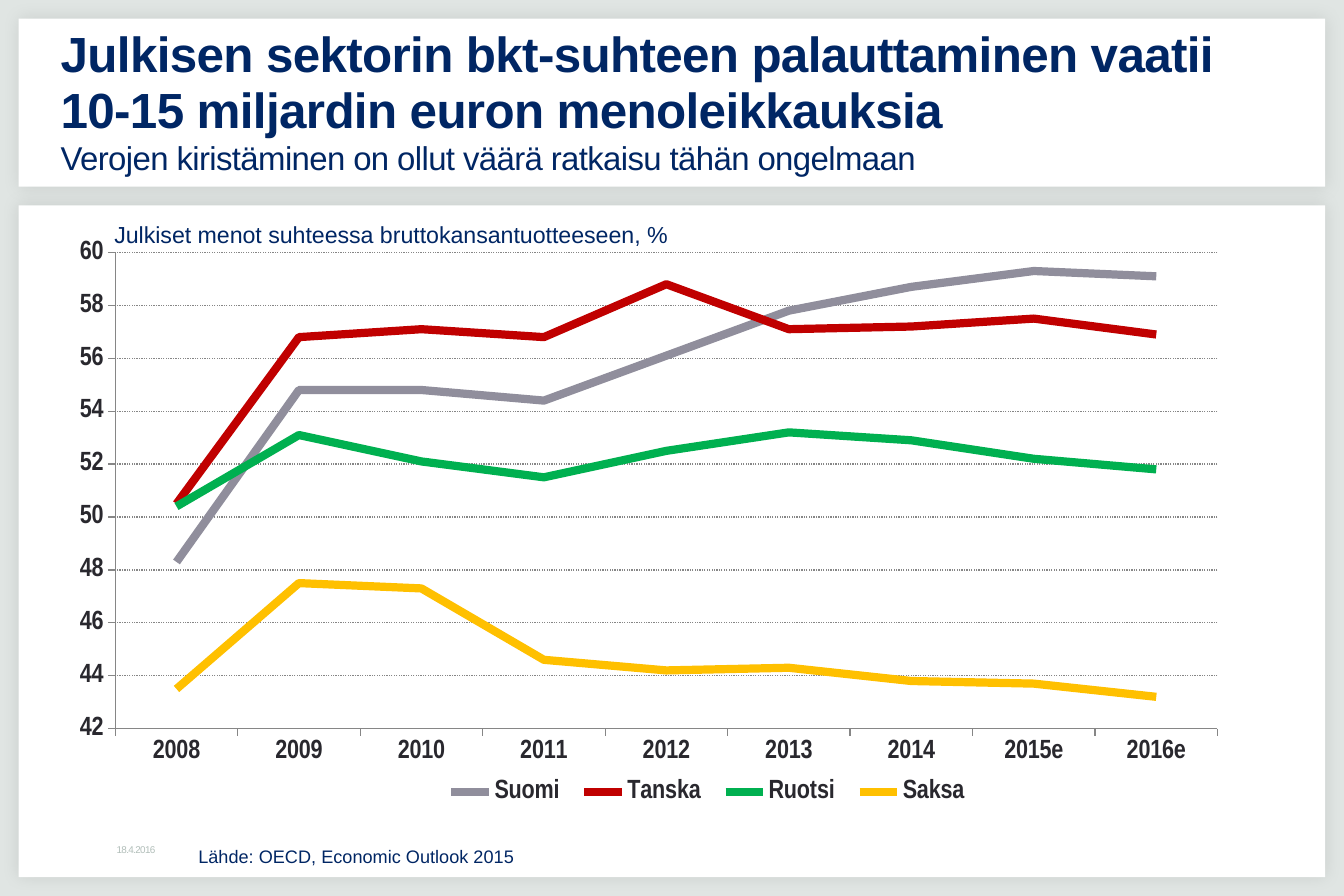
"""Build a slide comparing public spending to GDP in four countries."""
from dataclasses import dataclass

from pptx import Presentation
from pptx.chart.data import CategoryChartData
from pptx.dml.color import RGBColor
from pptx.enum.chart import XL_CHART_TYPE as ChartType, XL_LEGEND_POSITION as LegendPosition
from pptx.enum.chart import XL_TICK_MARK as TickMark
from pptx.enum.dml import MSO_LINE as Dash
from pptx.enum.shapes import MSO_SHAPE as ShapeType
from pptx.enum.text import MSO_ANCHOR as Anchor, MSO_AUTO_SIZE as AutoSize, PP_ALIGN as Align
from pptx.oxml import parse_xml
from pptx.oxml.ns import nsdecls
from pptx.util import Cm, Pt

TITLE = "Julkisen sektorin bkt-suhteen palauttaminen vaatii 10-15 miljardin euron menoleikkauksia"
SUBTITLE = "Verojen kiristäminen on ollut väärä ratkaisu tähän ongelmaan"
CAPTION = "Julkiset menot suhteessa bruttokansantuotteeseen, %"
SOURCE = "Lähde: OECD, Economic Outlook 2015"
DATE = "18.4.2016"

YEARS = ["2008", "2009", "2010", "2011", "2012", "2013", "2014", "2015e", "2016e"]
SPENDING = [
    ("Suomi", "908E9C", (48.3, 54.8, 54.8, 54.4, 56.1, 57.8, 58.7, 59.3, 59.1)),
    ("Tanska", "C00000", (50.5, 56.8, 57.1, 56.8, 58.8, 57.1, 57.2, 57.5, 56.9)),
    ("Ruotsi", "00B050", (50.4, 53.1, 52.1, 51.5, 52.5, 53.2, 52.9, 52.2, 51.8)),
    ("Saksa", "FFC000", (43.5, 47.5, 47.3, 44.6, 44.2, 44.3, 43.8, 43.7, 43.2)),
]
WIDTH, HEIGHT, MARGIN, HEADER = 28.8, 19.2, 0.4, 3.6
PLOT_AREA = (0.05, 0.02, 0.93, 0.83)
LEGEND_AREA = (0.32, 0.93, 0.46, 0.06)


@dataclass(frozen=True)
class Theme:
    font: str = "Arial"
    chart_font: str = "Arial Narrow"
    background: str = "E0E5E3"
    panel: str = "FFFFFF"
    navy: str = "002664"
    pale: str = "B1BEB9"
    ink: str = "29282E"
    rule: str = "868686"
    title_size: float = 30
    subtitle_size: float = 20
    caption_size: float = 14.1
    source_size: float = 11
    date_size: float = 6
    axis_size: float = 16


THEME = Theme()


def box(left, top, width, height):
    return Cm(left), Cm(top), Cm(width), Cm(height)


def paint(fill, color):
    fill.solid()
    fill.fore_color.rgb = RGBColor.from_string(color)


def set_font(font, name=THEME.font, size=THEME.source_size, color=THEME.navy, bold=False):
    font.name, font.size, font.bold = name, Pt(size), bold
    font.color.rgb = RGBColor.from_string(color)


def add_run(paragraph, text, spacing=None, **style):
    run = paragraph.add_run()
    run.text = text
    set_font(run.font, **style)
    if spacing:
        run.font._element.set("spc", str(round(spacing * 100)))


def add_text(slide, text, area, wrap=True, anchor=Anchor.TOP, inset=None, **style):
    frame = slide.shapes.add_textbox(*box(*area)).text_frame
    frame.word_wrap, frame.vertical_anchor = wrap, anchor
    if inset is not None:
        frame.margin_left = frame.margin_right = Cm(inset)
        frame.margin_top = frame.margin_bottom = Cm(inset)
    add_run(frame.paragraphs[0], text, **style)


def add_panel(slide, top, height):
    panel = slide.shapes.add_shape(
        ShapeType.RECTANGLE, *box(MARGIN, top, WIDTH - 2 * MARGIN, height))
    paint(panel.fill, THEME.panel)
    panel.line.fill.background()
    panel.element.spPr.append(parse_xml(
        f'<a:effectLst {nsdecls("a")}><a:outerShdw blurRad="{Pt(10)}" dist="0" dir="2700000">'
        '<a:srgbClr val="000000"><a:alpha val="10000"/></a:srgbClr>'
        '</a:outerShdw></a:effectLst>'))
    slide.shapes.title.element.addprevious(panel.element)


def fill_title(title):
    title.left, title.top, title.width, title.height = box(1.2, 0.8, 26.4, 2.8)
    frame = title.text_frame
    frame.auto_size, frame.word_wrap = AutoSize.NONE, True
    frame.vertical_anchor, frame.margin_left = Anchor.MIDDLE, Cm(0.1)
    paragraph = frame.paragraphs[0]
    paragraph.alignment, paragraph.line_spacing = Align.LEFT, 0.95
    add_run(paragraph, TITLE, size=THEME.title_size, bold=True, spacing=-0.4)
    paragraph.add_line_break()
    add_run(paragraph, SUBTITLE, size=THEME.subtitle_size, spacing=-0.4)


def place(element, index, area, target=""):
    for layout in element.xpath("c:layout"):
        element.remove(layout)
    values = "".join(f'<c:{key} val="{value}"/>' for key, value in zip("xywh", area))
    modes = '<c:xMode val="edge"/><c:yMode val="edge"/>'
    element.insert(index, parse_xml(
        f'<c:layout {nsdecls("c")}><c:manualLayout>{target}{modes}{values}'
        '</c:manualLayout></c:layout>'))


def style_line(line, color, width, dash=None):
    paint(line.fill, color)
    line.width = Pt(width)
    if dash:
        line.dash_style = dash


def add_spending_chart(slide):
    data = CategoryChartData()
    data.categories = YEARS
    for name, _, values in SPENDING:
        data.add_series(name, values)
    chart = slide.shapes.add_chart(ChartType.LINE, *box(1.2, 5.16, 25.4, 12.3), data).chart
    label = dict(name=THEME.chart_font, size=THEME.axis_size, color=THEME.ink, bold=True)
    set_font(chart.font, **label)
    chart.has_title = False
    plot = chart.plots[0]
    plot.vary_by_categories = False
    for series, (_, color, _) in zip(plot.series, SPENDING):
        series.smooth = False
        style_line(series.format.line, color, 5)
    for axis in (chart.category_axis, chart.value_axis):
        axis.major_tick_mark, axis.minor_tick_mark = TickMark.OUTSIDE, TickMark.NONE
        set_font(axis.tick_labels.font, **label)
        style_line(axis.format.line, THEME.rule, 0.75)
    axis = chart.value_axis
    axis.minimum_scale, axis.maximum_scale, axis.major_unit = 42, 60, 2
    axis.tick_labels.number_format = "General"
    axis.tick_labels.number_format_is_linked = False
    style_line(axis.major_gridlines.format.line, THEME.rule, 0.75, Dash.ROUND_DOT)
    chart.has_legend = True
    legend = chart.legend
    legend.position, legend.include_in_layout = LegendPosition.BOTTOM, False
    set_font(legend.font, **label)
    place(chart.element.xpath(".//c:plotArea")[0], 0, PLOT_AREA,
          '<c:layoutTarget val="inner"/>')
    place(chart.element.xpath(".//c:legend")[0], 1, LEGEND_AREA)


def main():
    presentation = Presentation()
    presentation.slide_width, presentation.slide_height = Cm(WIDTH), Cm(HEIGHT)
    slide = presentation.slides.add_slide(presentation.slide_layouts[5])
    paint(slide.background.fill, THEME.background)
    chart_top = HEADER + 2 * MARGIN
    add_panel(slide, MARGIN, HEADER)
    add_panel(slide, chart_top, HEIGHT - MARGIN - chart_top)
    fill_title(slide.shapes.title)
    add_text(slide, DATE, (2.4, 18, 3.6, 0.4), anchor=Anchor.MIDDLE, inset=0.1,
             size=THEME.date_size, color=THEME.pale, spacing=-0.4)
    add_spending_chart(slide)
    add_text(slide, SOURCE, (4, 18, 13.6, 0.74))
    add_text(slide, CAPTION, (2.2, 4.6, 12.5, 0.86), wrap=False, size=THEME.caption_size)
    presentation.save("out.pptx")


if __name__ == "__main__":
    main()
